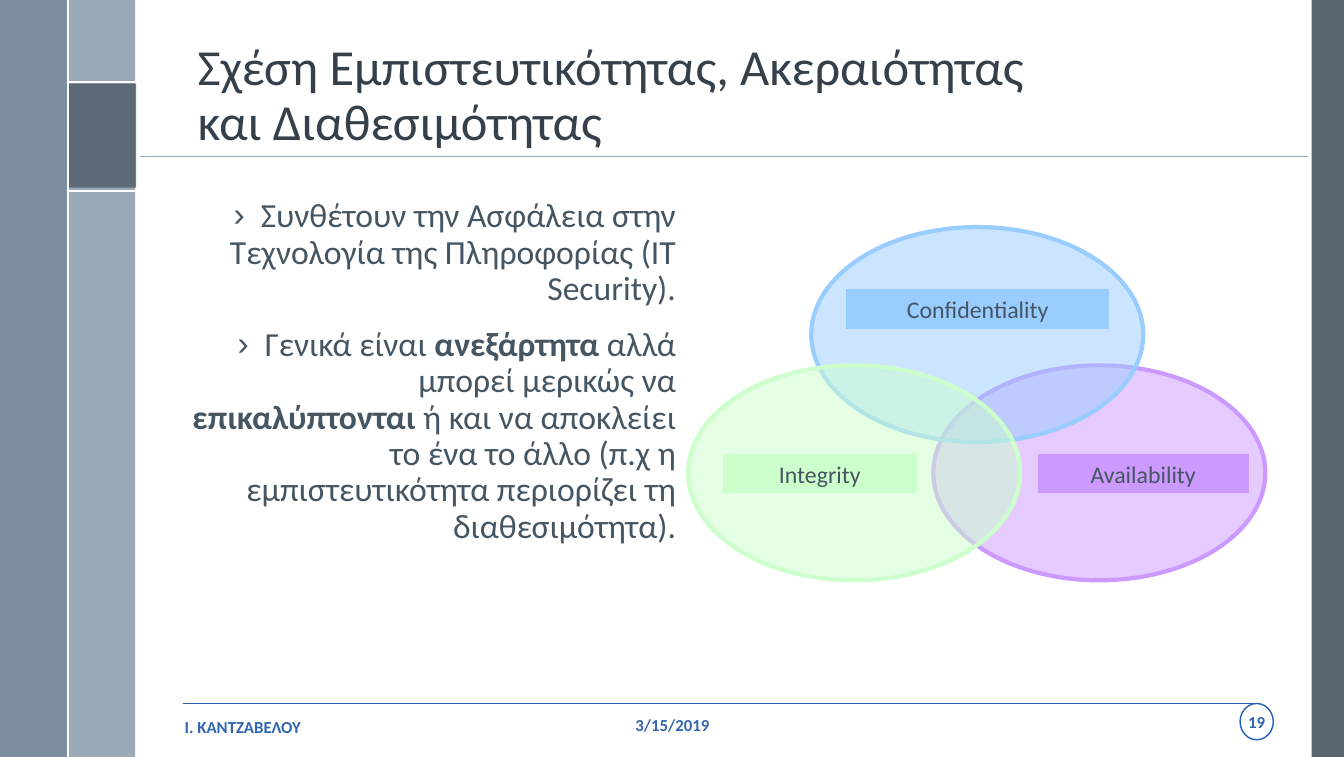
from lxml import etree
from pptx import Presentation
from pptx.dml.color import RGBColor
from pptx.enum.shapes import MSO_CONNECTOR, MSO_SHAPE
from pptx.enum.text import MSO_ANCHOR, MSO_AUTO_SIZE, PP_ALIGN
from pptx.oxml.ns import qn
from pptx.util import Emu, Pt

PX = 9144
FONT = "Calibri"
SLATE = "465562"
BLUE = "3065AF"


def add_figure(kind, box, fill=None, alpha=100, line=None, width=1):
    sp = s.shapes.add_shape(kind, *[Emu(v * PX) for v in box])
    sp.shadow.inherit = False
    if fill:
        sp.fill.solid()
        sp.fill.fore_color.rgb = RGBColor.from_string(fill)
        if alpha < 100:
            color = sp.fill._xPr.find(qn("a:solidFill"))[0]
            etree.SubElement(color, qn("a:alpha"), val=str(alpha * 1000))
    else:
        sp.fill.background()
    if line:
        sp.line.color.rgb = RGBColor.from_string(line)
        sp.line.width = Pt(width)
    else:
        sp.line.fill.background()
    return sp


def format_text(tf, size, color, align, anchor, inset=5, bold=False):
    tf.auto_size = MSO_AUTO_SIZE.NONE
    tf.vertical_anchor = anchor
    tf.margin_left = tf.margin_right = Emu(inset * PX)
    tf.margin_top = tf.margin_bottom = Emu(inset * PX)
    for p in tf.paragraphs:
        p.alignment = align
        for r in p.runs:
            r.font.name = FONT
            r.font.size = Pt(size)
            r.font.color.rgb = RGBColor.from_string(color)
            r.font.bold = r.font.bold or bold


prs = Presentation()
prs.slide_width = Emu(1332 * PX)
prs.slide_height = Emu(750 * PX)
s = prs.slides.add_slide(prs.slide_layouts[1])

title, body = s.placeholders
for ph, box in [(title, (191, 19, 1070, 136)), (body, (156, 192, 519, 508))]:
    ph.left, ph.top, ph.width, ph.height = [Emu(v * PX) for v in box]

title.text_frame.text = "Σχέση Εμπιστευτικότητας, Ακεραιότητας\vκαι Διαθεσιμότητας"
title.text_frame.paragraphs[0].line_spacing = 0.9
format_text(title.text_frame, 36, "35404A", PP_ALIGN.LEFT, MSO_ANCHOR.BOTTOM)

points = [
    [("Συνθέτουν την Ασφάλεια στην Τεχνολογία της Πληροφορίας (IT Security).", False)],
    [
        ("Γενικά είναι ", False),
        ("ανεξάρτητα", True),
        (" αλλά μπορεί μερικώς να ", False),
        ("επικαλύπτονται", True),
        (" ή και να αποκλείει το ένα το άλλο (π.χ η εμπιστευτικότητα "
         "περιορίζει τη διαθεσιμότητα).", False),
    ],
]
tf = body.text_frame
for i, point in enumerate(points):
    p = tf.add_paragraph() if i else tf.paragraphs[0]
    p.line_spacing = 0.9
    p.space_before = Pt(14 if i else 0)
    pPr = p._p.get_or_add_pPr()
    pPr.set("marL", str(27 * PX))
    pPr.set("indent", str(-27 * PX))
    etree.SubElement(pPr, qn("a:buChar"), char="›")
    for text, bold in point:
        r = p.add_run()
        r.text = text
        r.font.bold = bold
format_text(tf, 24, SLATE, PP_ALIGN.RIGHT, MSO_ANCHOR.TOP)

bands = [
    ((1300, 0, 32, 750), "475562", 90),
    ((67, 0, 67, 750), "9BAAB7", 100),
    ((0, 0, 67, 750), "6A8093", 88),
    ((68, 83, 67, 103), "475562", 75),
]
for box, fill, alpha in bands:
    add_figure(MSO_SHAPE.RECTANGLE, box, fill, alpha)

rules = [
    ((67, 81, 134, 81), "FFFFFF", 1.5),
    ((67, 189, 134, 189), "FFFFFF", 1.5),
    ((67, 0, 67, 750), "FFFFFF", 1.5),
    ((139, 155, 1296, 155), "9BAAB7", 0.5),
    ((181, 697, 1248, 697), "2D63B1", 1),
]
for ends, color, width in rules:
    rule = s.shapes.add_connector(MSO_CONNECTOR.STRAIGHT, *[Emu(v * PX) for v in ends])
    rule.line.color.rgb = RGBColor.from_string(color)
    rule.line.width = Pt(width)
    etree.SubElement(rule._element.spPr, qn("a:effectLst"))

author = s.shapes.add_textbox(*[Emu(v * PX) for v in (178, 705, 153, 29)])
author.text_frame.text = "Ι. ΚΑΝΤΖΑΒΕΛΟΥ"
author.text_frame.word_wrap = True
format_text(author.text_frame, 12, BLUE, PP_ALIGN.LEFT, MSO_ANCHOR.TOP, bold=True)

date_box = [Emu(v * PX) for v in (617, 705, 99, 29)]
date_table = s.shapes.add_table(1, 1, *date_box).table
date_table.first_row = date_table.horz_banding = False
cell = date_table.cell(0, 0)
cell.fill.background()
cell.vertical_anchor = MSO_ANCHOR.MIDDLE
cell.margin_left = cell.margin_right = cell.margin_top = cell.margin_bottom = 0
p = cell.text_frame.paragraphs[0]
p.text = "3/15/2019"
p.alignment = PP_ALIGN.CENTER
font = p.runs[0].font
font.name, font.size, font.bold = FONT, Pt(12), True
font.color.rgb = RGBColor.from_string("3367AD")

number = add_figure(MSO_SHAPE.OVAL, (1229, 697, 33, 36), line="265FB7")
number.text_frame.text = "19"
number.text_frame.word_wrap = False
format_text(number.text_frame, 12, BLUE, PP_ALIGN.CENTER, MSO_ANCHOR.MIDDLE, 0, True)

circles = [
    ("Availability", "CC99FF", (925, 362), (1029, 450, 208)),
    ("Confidentiality", "99CCFF", (804, 225), (839, 287, 260)),
    ("Integrity", "CCFFCC", (682, 362), (717, 450, 191)),
]
for name, color, corner, label_box in circles:
    add_figure(MSO_SHAPE.OVAL, (*corner, 329, 213), color, 50, color, 3)
    label = add_figure(MSO_SHAPE.RECTANGLE, (*label_box, 38), color, 100, color, 0.75)
    label.text_frame.text = name
    format_text(label.text_frame, 17, SLATE, PP_ALIGN.CENTER, MSO_ANCHOR.TOP)

prs.save("out.pptx")
